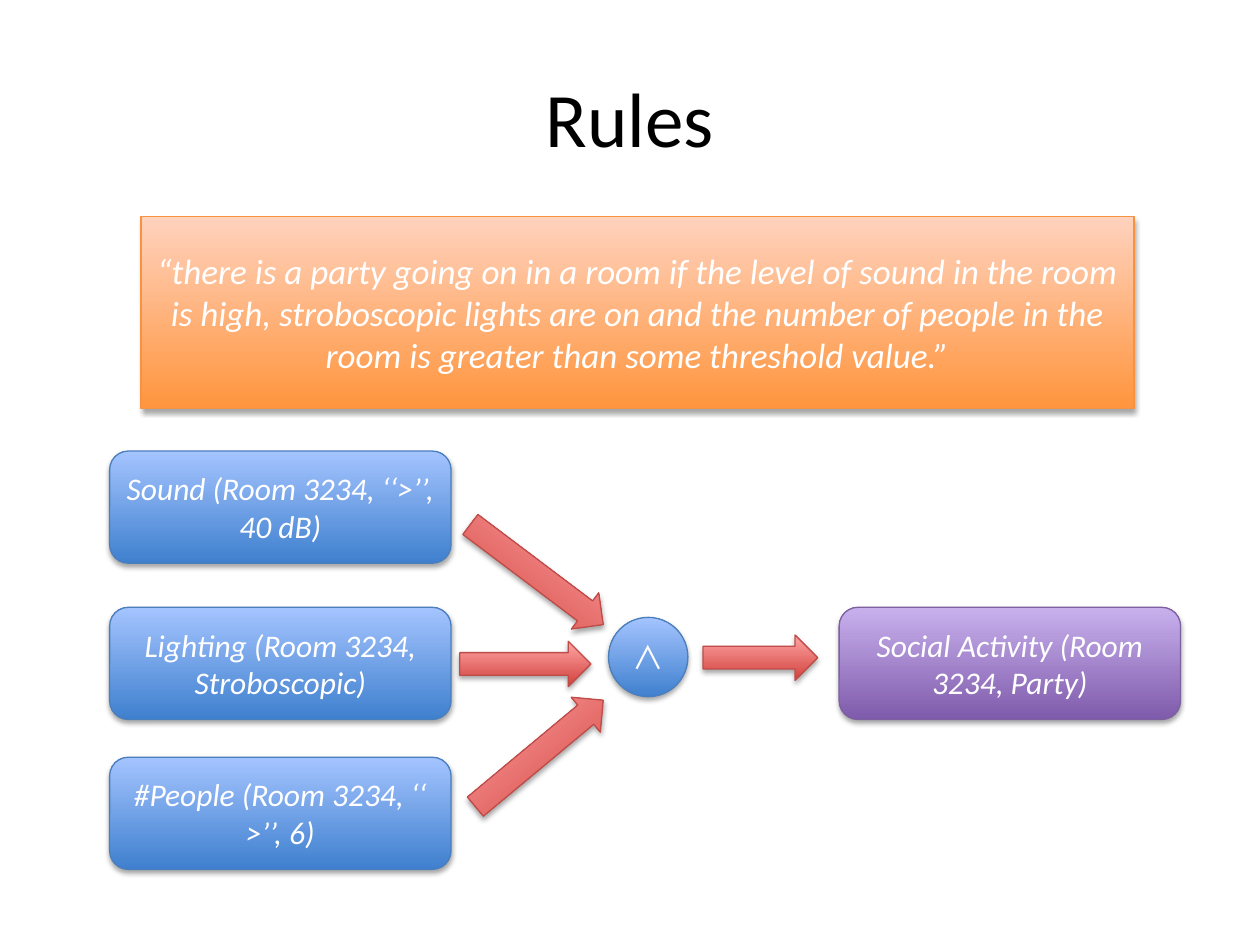
from lxml import etree
from pptx import Presentation
from pptx.dml.color import RGBColor
from pptx.enum.shapes import MSO_SHAPE
from pptx.enum.text import MSO_ANCHOR, PP_ALIGN
from pptx.oxml.ns import qn
from pptx.util import Inches, Pt

BOX, ROUNDED = MSO_SHAPE.RECTANGLE, MSO_SHAPE.ROUNDED_RECTANGLE
CIRCLE, ARROW = MSO_SHAPE.OVAL, MSO_SHAPE.RIGHT_ARROW
MIDDLE, CENTER = MSO_ANCHOR.MIDDLE, PP_ALIGN.CENTER

WHITE = RGBColor(0xFF, 0xFF, 0xFF)
BLACK = RGBColor(0, 0, 0)
BLUE = RGBColor(0x3F, 0x80, 0xCE), RGBColor(0xA4, 0xC4, 0xFF), RGBColor(0x4B, 0x7E, 0xBC)
PURPLE = RGBColor(0x7F, 0x5B, 0xAB), RGBColor(0xC8, 0xB0, 0xED), RGBColor(0x7D, 0x60, 0xA0)
RED = RGBColor(0xD1, 0x40, 0x3C), RGBColor(0xFF, 0xA6, 0xA5), RGBColor(0xBF, 0x4C, 0x48)
ORANGE = RGBColor(0xFF, 0x95, 0x3E), RGBColor(0xFF, 0xD2, 0xBD), RGBColor(0xF6, 0x92, 0x40)

COLUMNS, ROWS = 100, 75
FACT_SIZE = 27.1, 8.9
ARROW_HEIGHT = 3.6


def write(frame, text, size=18, font="Calibri", color=WHITE, italic=False):
    frame.word_wrap = True
    frame.vertical_anchor = MIDDLE
    paragraph = frame.paragraphs[0]
    paragraph.alignment = CENTER
    run = paragraph.add_run()
    run.text = text
    run.font.size = Pt(size)
    run.font.name = font
    run.font.italic = italic
    run.font.color.rgb = color
    etree.SubElement(run.font._element, qn("a:ea"), typeface=font)


class RuleSlide:
    def __init__(self, deck):
        self.slide = deck.slides.add_slide(deck.slide_layouts[5])
        self.column = deck.slide_width / COLUMNS
        self.row = deck.slide_height / ROWS

    def area(self, left, top, width, height):
        return (round(left * self.column), round(top * self.row),
                round(width * self.column), round(height * self.row))

    def title(self, text, *place):
        heading = self.slide.shapes.title
        heading.left, heading.top, heading.width, heading.height = self.area(*place)
        write(heading.text_frame, text, size=44, color=BLACK)

    def block(self, kind, palette, *place):
        block = self.slide.shapes.add_shape(kind, *self.area(*place))
        bottom, top, outline = palette
        block.fill.gradient()
        block.fill.gradient_angle = 90
        for stop, color in zip(block.fill.gradient_stops, (bottom, top)):
            stop.color.rgb = color
        block.line.color.rgb = outline
        block.line.width = Pt(0.75)
        self.cast_shadow(block)
        return block

    def cast_shadow(self, block):
        block.shadow.inherit = False
        effects = block._element.spPr.find(qn("a:effectLst"))
        shadow = etree.SubElement(effects, qn("a:outerShdw"), blurRad=str(Pt(3.1)),
                                  dist=str(Pt(1.8)), dir="5400000", rotWithShape="0")
        tint = etree.SubElement(shadow, qn("a:srgbClr"), val="000000")
        etree.SubElement(tint, qn("a:alpha"), val="35000")

    def fact(self, text, palette, left, top):
        frame = self.block(ROUNDED, palette, left, top, *FACT_SIZE).text_frame
        frame.margin_left = frame.margin_right = 0
        write(frame, text, italic=True)

    def operator(self, symbol, left, top, diameter):
        circle = self.block(CIRCLE, BLUE, left, top, diameter, diameter)
        write(circle.text_frame, symbol, font="Noto Sans CJK JP")

    def arrow(self, left, top, length, angle=0, shaft=0.5):
        arrow = self.block(ARROW, RED, left, top, length, ARROW_HEIGHT)
        arrow.rotation = angle
        arrow.adjustments[0] = shaft

    def statement(self, text, *place):
        panel = self.block(BOX, ORANGE, *place)
        write(panel.text_frame, text, size=20, italic=True)


def main():
    deck = Presentation()
    deck.slide_width, deck.slide_height = Inches(10), Inches(7.5)
    rules = RuleSlide(deck)
    rules.title("Rules", 5, 3, 90, 12.5)

    conditions = (
        ("Sound (Room 3234, ‘‘>’’, 40 dB)", 35.8),
        ("Lighting (Room 3234, Stroboscopic)", 48.2),
        ("#People (Room 3234, ‘‘ >’’, 6)", 60.1),
    )
    for condition, top in conditions:
        rules.fact(condition, BLUE, 8.7, top)
    rules.fact("Social Activity (Room 3234, Party)", PURPLE, 66.6, 48.2)

    rules.arrow(55.8, 50.4, 9.1)
    rules.operator("∧", 48.3, 49, 6.3)
    rules.arrow(36, 43.8, 13.2, angle=37, shaft=0.55)
    rules.arrow(36.2, 58, 13.2, angle=320.2, shaft=0.55)
    rules.arrow(36.5, 50.9, 10.4)

    rules.statement(
        "“there is a party going on in a room if the level of sound in the room is high, "
        "stroboscopic lights are on and the number of people in the room is greater than "
        "some threshold value.”", 11.2, 17.2, 78.8, 15.2)
    deck.save("out.pptx")


if __name__ == "__main__":
    main()
